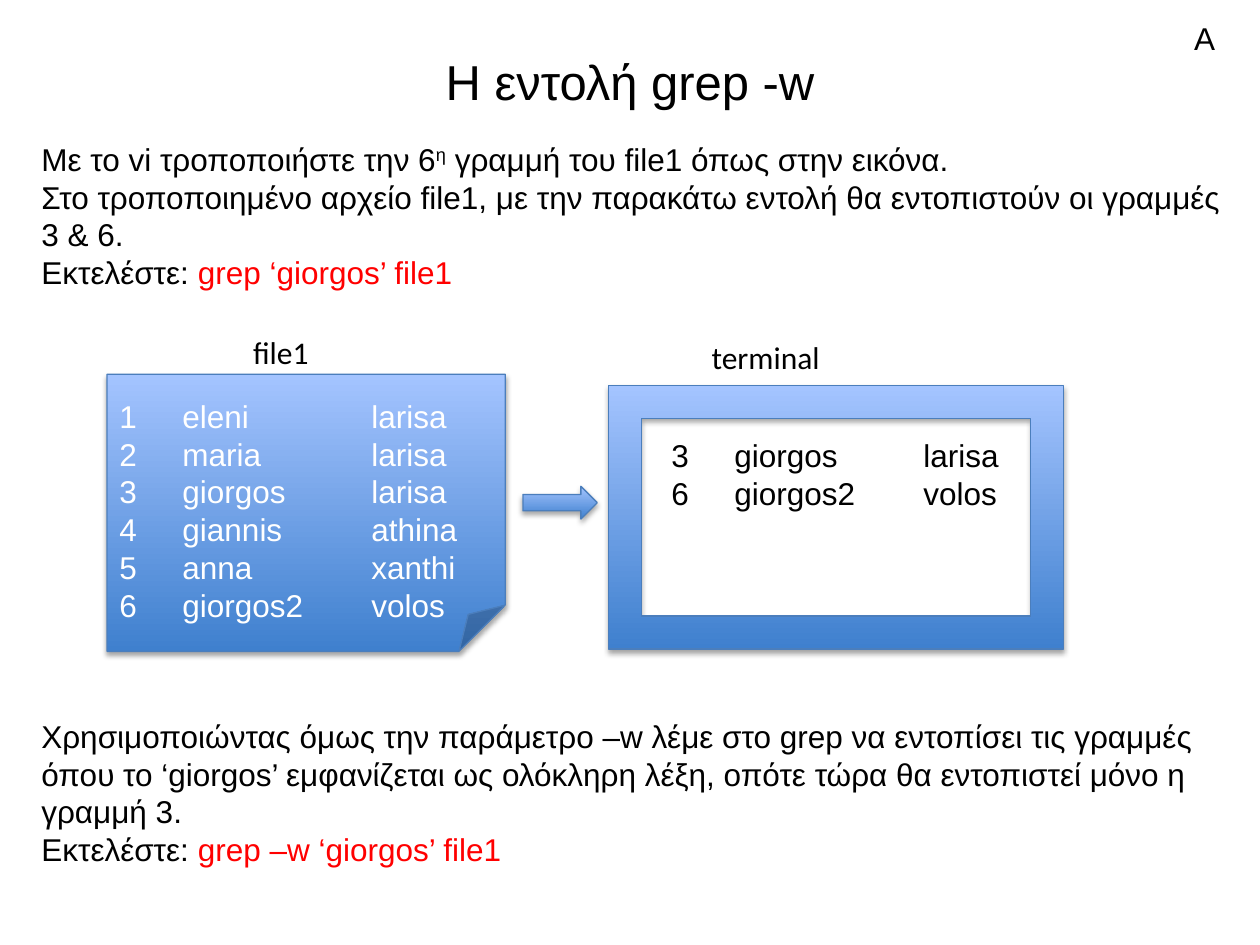
from lxml import etree
from pptx import Presentation
from pptx.dml.color import RGBColor
from pptx.enum.shapes import MSO_SHAPE
from pptx.enum.text import MSO_ANCHOR, MSO_AUTO_SIZE, PP_ALIGN
from pptx.oxml.ns import qn
from pptx.util import Inches, Pt

BLACK = RGBColor(0x00, 0x00, 0x00)
WHITE = RGBColor(0xFF, 0xFF, 0xFF)
RED = RGBColor(0xFF, 0x00, 0x00)
DARK = RGBColor(0x3F, 0x80, 0xCE)
LIGHT = RGBColor(0xA4, 0xC4, 0xFF)
EDGE = RGBColor(0x4B, 0x7E, 0xBC)
NOTE, ARROW, FRAME = MSO_SHAPE.FOLDED_CORNER, MSO_SHAPE.RIGHT_ARROW, MSO_SHAPE.FRAME
LEFT, CENTER = PP_ALIGN.LEFT, PP_ALIGN.CENTER
TOP, MIDDLE = MSO_ANCHOR.TOP, MSO_ANCHOR.MIDDLE
GROW = MSO_AUTO_SIZE.SHAPE_TO_FIT_TEXT
COLS, ROWS = 100, 75


def write(frame, lines, size=18, font="Arial", color=BLACK, align=LEFT, anchor=TOP, wrap=True):
    """Fill a text frame; a line is a string or a list of (text, changes) runs."""
    frame.word_wrap = wrap
    frame.vertical_anchor = anchor
    for i, line in enumerate(lines):
        para = frame.add_paragraph() if i else frame.paragraphs[0]
        para.alignment = align
        for text, change in [(line, {})] if isinstance(line, str) else line:
            run = para.add_run()
            run.text = text
            run.font.size, run.font.name = Pt(size), font
            run.font.color.rgb = change.get("color", color)
            if "raised" in change:
                run.font._element.set("baseline", str(change["raised"] * 1000))


class Page:
    """Slide with a fixed style, placed on a grid of columns and rows."""

    def __init__(self, deck):
        self.deck = deck
        self.slide = deck.slides.add_slide(deck.slide_layouts[5])

    def box(self, col, row, wide, high):
        """Turn grid units into left, top, width and height."""
        x, y = self.deck.slide_width / COLS, self.deck.slide_height / ROWS
        return [int(n) for n in (col * x, row * y, wide * x, high * y)]

    def title(self, text, *place):
        """Move and fill the title placeholder."""
        shape = self.slide.shapes.title
        shape.left, shape.top, shape.width, shape.height = self.box(*place)
        write(shape.text_frame, [text], size=28, align=CENTER, anchor=MIDDLE)

    def text(self, lines, *place, **style):
        """Add a text box that grows with its text."""
        frame = self.slide.shapes.add_textbox(*self.box(*place)).text_frame
        write(frame, lines, **style)
        frame.auto_size = GROW

    def shape(self, kind, *place):
        """Add a preset shape with gradient, edge and soft shadow."""
        shape = self.slide.shapes.add_shape(kind, *self.box(*place))
        shape.fill.gradient()
        shape.fill.gradient_angle = 90
        for stop, color, spot in zip(shape.fill.gradient_stops, (DARK, LIGHT), (0, 1)):
            stop.color.rgb, stop.position = color, spot
        shape.line.color.rgb, shape.line.width = EDGE, Pt(0.75)
        shape.shadow.inherit = False
        effect = shape._element.spPr.find(qn("a:effectLst"))
        shade = etree.SubElement(effect, qn("a:outerShdw"), blurRad=str(Pt(3.1)),
                                 dist=str(Pt(1.8)), dir="5400000", rotWithShape="0")
        tint = etree.SubElement(shade, qn("a:srgbClr"), val=str(BLACK))
        etree.SubElement(tint, qn("a:alpha"), val="35000")
        return shape


def main():
    """Build and save the slide."""
    deck = Presentation()
    deck.slide_width, deck.slide_height = Inches(10), Inches(7.5)
    page = Page(deck)
    run = "Εκτελέστε: "
    people = [("eleni", "larisa"), ("maria", "larisa"), ("giorgos", "larisa"),
              ("giannis", "athina"), ("anna", "xanthi"), ("giorgos2", "volos")]
    rows = [f"{i}\t{name}\t\t{town}" for i, (name, town) in enumerate(people, 1)]
    found = [row for row in rows if "giorgos" in row]

    page.title("Η εντολή grep -w", 5, 3, 90, 6.8)
    page.text([
        [("Με το vi τροποποιήστε την 6", {}), ("η", {"raised": 30}),
         (" γραμμή του file1 όπως στην εικόνα.", {})],
        "Στο τροποποιημένο αρχείο file1, με την παρακάτω εντολή θα εντοπιστούν οι γραμμές 3 & 6.",
        [(run, {}), ("grep ‘giorgos’ file1", {"color": RED})],
    ], 2.3, 10.6, 96.1, 13.1)

    note = page.shape(NOTE, 8.5, 29.7, 31.6, 22)
    note.text_frame.margin_top = Inches(0.18)
    write(note.text_frame, rows, color=WHITE)
    page.shape(ARROW, 41.5, 38.6, 5.9, 2.6)
    page.shape(FRAME, 48.3, 30.6, 36.1, 20.9)
    page.text(found, 52.3, 34.1, 34.9, 10.1)
    page.text(["file1"], 19.1, 25.9, 6.5, 4, font="Calibri", wrap=False)
    page.text(["terminal"], 55.5, 26.3, 10.7, 4, font="Calibri", wrap=False)

    page.text([
        "Χρησιμοποιώντας όμως την παράμετρο –w λέμε στο grep να εντοπίσει τις γραμμές "
        "όπου το ‘giorgos’ εμφανίζεται ως ολόκληρη λέξη, οπότε τώρα θα εντοπιστεί μόνο η γραμμή 3.",
        [(run, {}), ("grep –w ‘giorgos’ file1", {"color": RED})],
    ], 2.3, 56.4, 96.1, 13.1)
    page.text(["Α"], 93.8, 1, 5, 4)
    deck.save("out.pptx")


if __name__ == "__main__":
    main()
